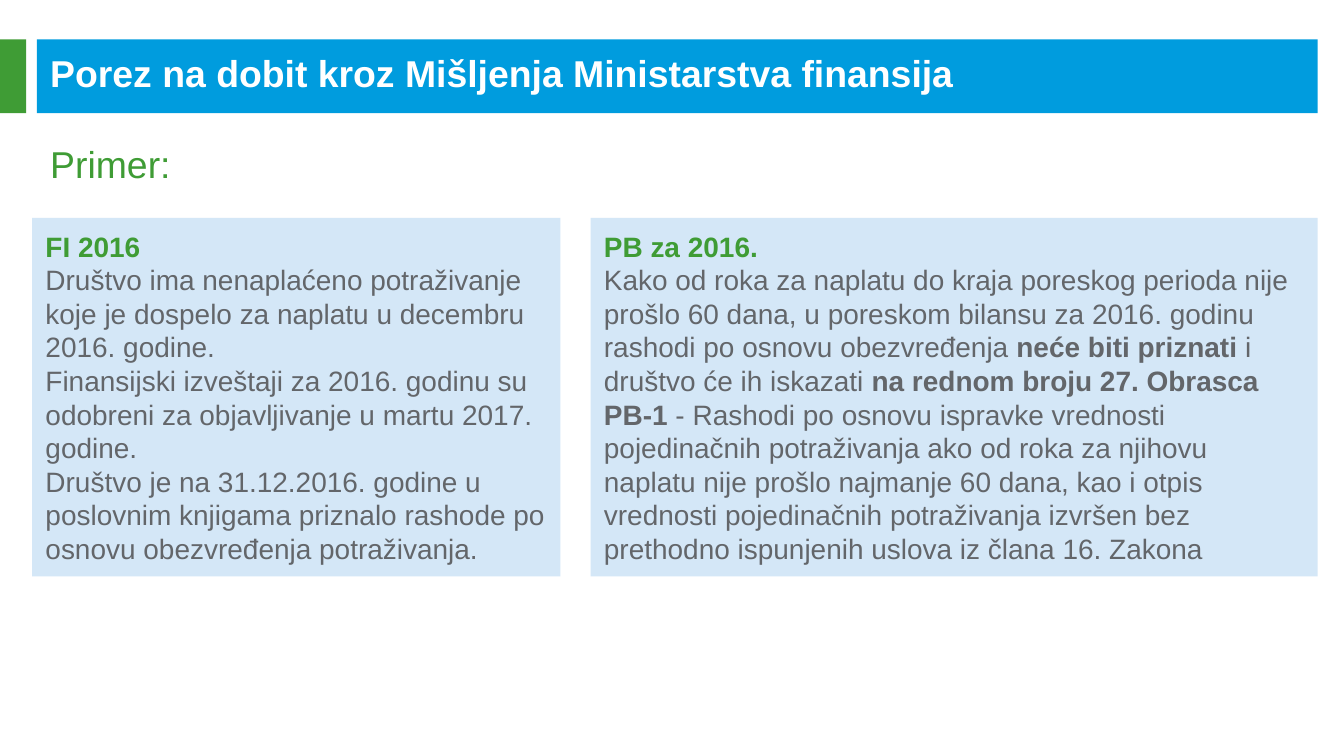
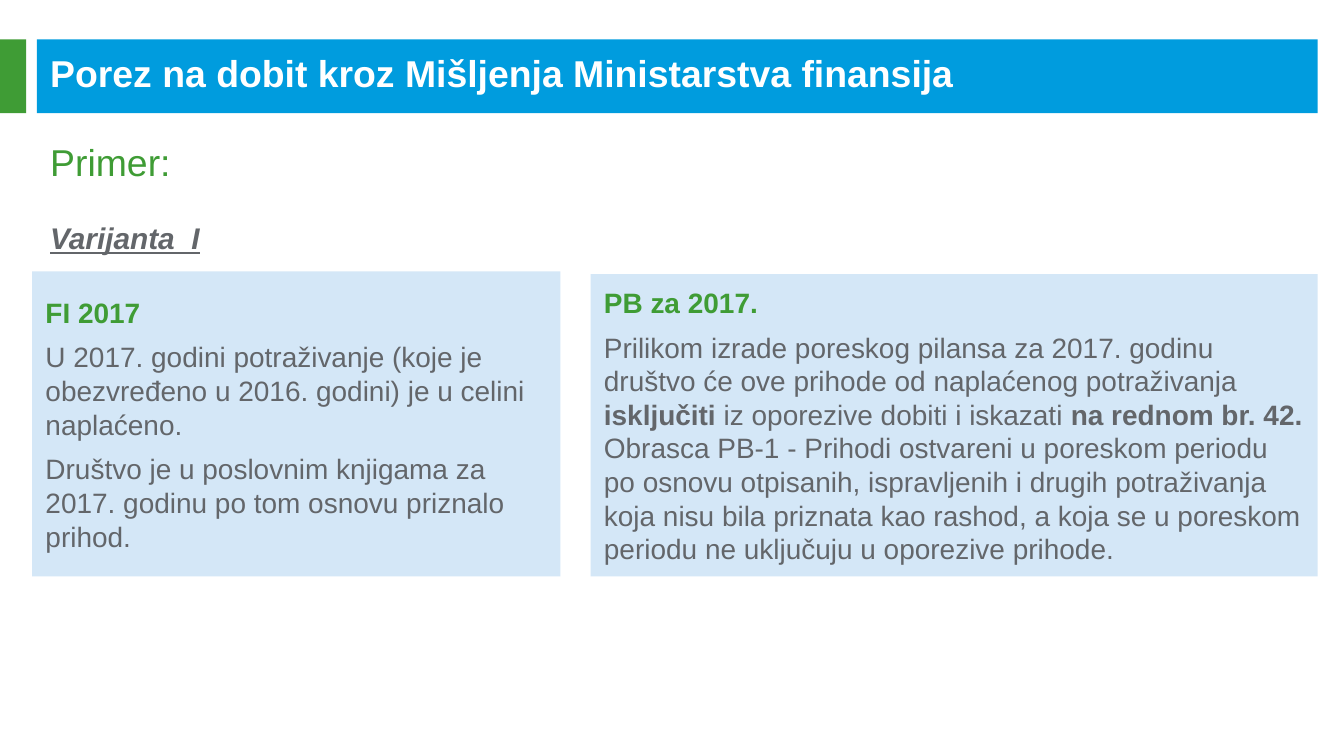
from pptx import Presentation
from pptx import util as u
from pptx.dml import color
from pptx.enum import shapes, text

SLIDE_WIDTH = u.Inches(10)
SLIDE_HEIGHT = SLIDE_WIDTH * 9 // 16
FONT = "Arial"
BLUE, GREEN, PALE_BLUE = "009CDE", "3F9C35", "D4E7F7"
GREY, WHITE = "63666A", "FFFFFF"

TITLE = "Porez na dobit kroz Mišljenja Ministarstva finansija"

# Shared edges, in percent of the slide's width or height
BAND_LEFT, RIGHT_EDGE = 2.75, 98.05
BAND_TOP, BAND_HEIGHT = 5.2, 9.78
PANEL_COLUMNS = ((2.4, 39.3), (43.95, 54.1))  # left, width
PANEL_BOTTOM = 76.25


def rgb(value):
    return color.RGBColor.from_string(value)


def place(left, top, width, height):
    """Turn percentages of the slide into lengths."""
    return (int(SLIDE_WIDTH * left / 100), int(SLIDE_HEIGHT * top / 100),
            int(SLIDE_WIDTH * width / 100), int(SLIDE_HEIGHT * height / 100))


def add_rectangle(slide, box, fill):
    shape = slide.shapes.add_shape(shapes.MSO_SHAPE.RECTANGLE, *place(*box))
    shape.shadow.inherit = False
    shape.fill.solid()
    shape.fill.fore_color.rgb = rgb(fill)
    shape.line.fill.background()
    return shape


def add_text_box(slide, box, anchor):
    frame = slide.shapes.add_textbox(*place(*box)).text_frame
    frame.word_wrap = True
    frame.vertical_anchor = anchor
    return frame


def add_run(paragraph, words, size, fill, bold=False, italic=False, underline=False):
    run = paragraph.add_run()
    run.text = words
    font = run.font
    font.name, font.size = FONT, u.Pt(size)
    font.color.rgb = rgb(fill)
    font.bold, font.italic, font.underline = bold, italic, underline


def add_title_band(slide):
    add_rectangle(slide, (BAND_LEFT, BAND_TOP, RIGHT_EDGE - BAND_LEFT, BAND_HEIGHT), BLUE)
    add_rectangle(slide, (0, BAND_TOP, 1.95, BAND_HEIGHT), GREEN)
    frame = add_text_box(slide, (BAND_LEFT, 6.93, 93.6, 5.33), text.MSO_ANCHOR.MIDDLE)
    add_run(frame.paragraphs[0], TITLE, 20, WHITE, bold=True)


def add_heading(slide, top, variant):
    box = (BAND_LEFT, top, RIGHT_EDGE - BAND_LEFT, 9.42)
    frame = add_text_box(slide, box, text.MSO_ANCHOR.TOP)
    add_run(frame.paragraphs[0], "Primer:", 20, GREEN)
    if variant:
        paragraph = frame.add_paragraph()
        paragraph.space_before = u.Pt(19)
        add_run(paragraph, variant, 16, GREY, bold=True, italic=True, underline=True)


def add_panel(slide, column, top, heading, body, gap):
    """Each body paragraph is a list of runs, alternating regular and bold."""
    left, width = column
    shape = add_rectangle(slide, (left, top, width, PANEL_BOTTOM - top), PALE_BLUE)
    frame = shape.text_frame
    frame.word_wrap = True
    frame.vertical_anchor = text.MSO_ANCHOR.MIDDLE
    add_run(frame.paragraphs[0], heading, 15, GREEN, bold=True)
    for runs in body:
        paragraph = frame.add_paragraph()
        for index, words in enumerate(runs):
            add_run(paragraph, words, 15, GREY, bold=index % 2 == 1)
    for paragraph in frame.paragraphs:
        paragraph.alignment = text.PP_ALIGN.LEFT
        paragraph.space_after = u.Pt(gap)


def add_example_slide(presentation, heading_top, panels, gap=0, variant=None):
    slide = presentation.slides.add_slide(presentation.slide_layouts[6])
    add_title_band(slide)
    add_heading(slide, heading_top, variant)
    for column, (top, heading, body) in zip(PANEL_COLUMNS, panels):
        add_panel(slide, column, top, heading, body, gap)


# Panel contents: top edge, heading, body paragraphs
PANELS_2016 = [
    (28.83, "FI 2016", [
        ["Društvo ima nenaplaćeno potraživanje koje je dospelo za naplatu "
         "u decembru 2016. godine."],
        ["Finansijski izveštaji za 2016. godinu su odobreni za objavljivanje "
         "u martu 2017. godine."],
        ["Društvo je na 31.12.2016. godine u poslovnim knjigama priznalo "
         "rashode po osnovu obezvređenja potraživanja."],
    ]),
    (28.83, "PB za 2016.", [
        ["Kako od roka za naplatu do kraja poreskog perioda nije prošlo 60 dana, "
         "u poreskom bilansu za 2016. godinu rashodi po osnovu obezvređenja ",
         "neće biti priznati ",
         "i društvo će ih iskazati ",
         "na rednom broju 27. Obrasca PB-1",
         " - Rashodi po osnovu ispravke vrednosti pojedinačnih potraživanja "
         "ako od roka za njihovu naplatu nije prošlo najmanje 60 dana, kao i "
         "otpis vrednosti pojedinačnih potraživanja izvršen bez prethodno "
         "ispunjenih uslova iz člana 16. Zakona"],
    ]),
]
PANELS_2017 = [
    (35.91, "FI 2017", [
        ["U 2017. godini potraživanje (koje je obezvređeno u 2016. godini) "
         "je u celini naplaćeno."],
        ["Društvo je u poslovnim knjigama za 2017. godinu po tom osnovu "
         "priznalo prihod."],
    ]),
    (36.27, "PB za 2017.", [
        ["Prilikom izrade poreskog pilansa za 2017. godinu društvo će ove "
         "prihode od naplaćenog potraživanja ",
         "isključiti ",
         "iz oporezive dobiti i iskazati ",
         "na rednom br. 42. ",
         "Obrasca PB-1 - Prihodi ostvareni u poreskom periodu po osnovu "
         "otpisanih, ispravljenih i drugih potraživanja koja nisu bila priznata "
         "kao rashod, a koja se u poreskom periodu ne uključuju u oporezive "
         "prihode."],
    ]),
]


def main():
    presentation = Presentation()
    presentation.slide_width, presentation.slide_height = SLIDE_WIDTH, SLIDE_HEIGHT
    add_example_slide(presentation, 17.78, PANELS_2016)
    add_example_slide(presentation, 17.6, PANELS_2017, gap=6, variant="Varijanta  I")
    presentation.save("out.pptx")


if __name__ == "__main__":
    main()
